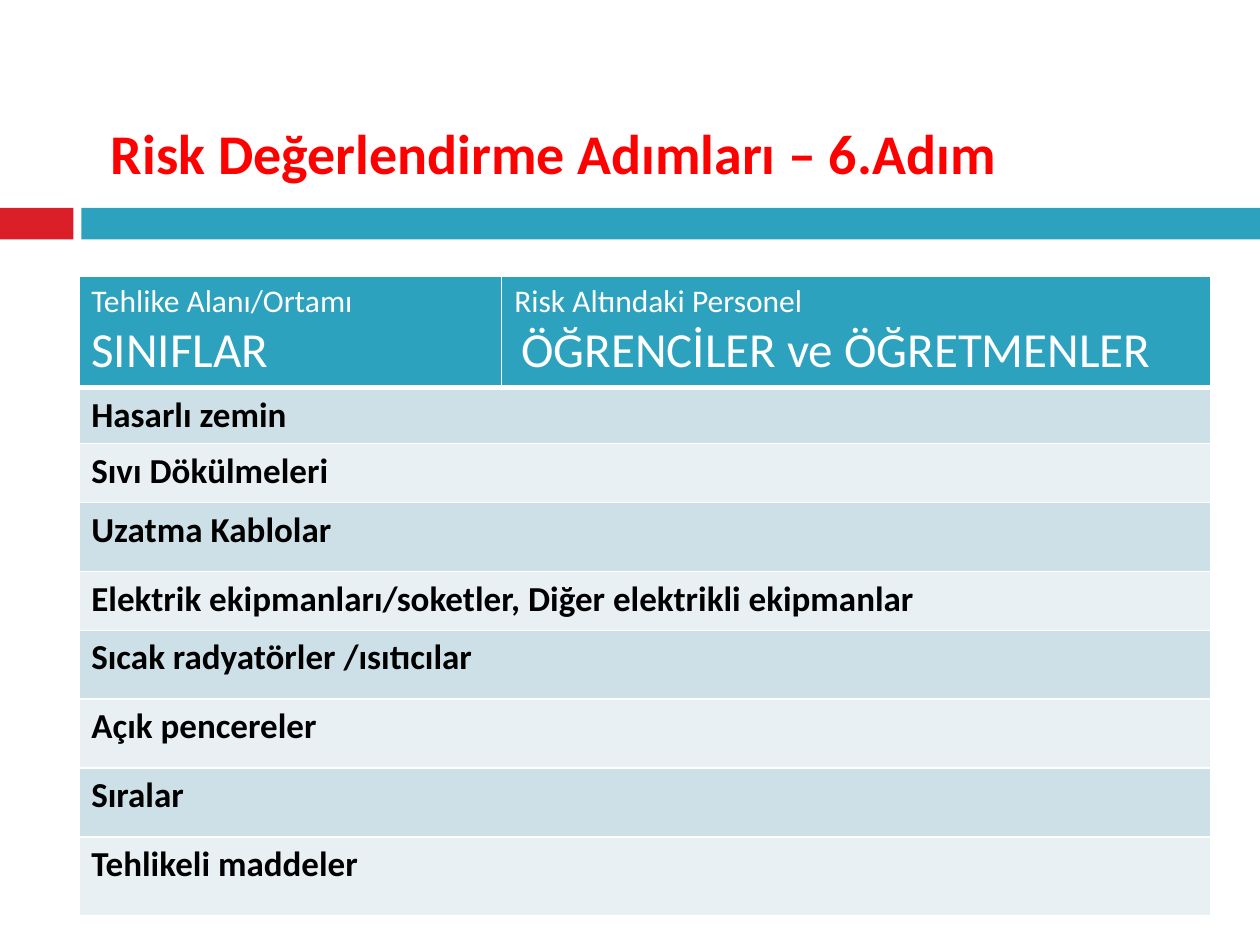
from lxml.etree import SubElement
from pptx import Presentation
from pptx.dml.color import RGBColor
from pptx.enum.shapes import MSO_SHAPE
from pptx.enum.text import MSO_ANCHOR, MSO_AUTO_SIZE, PP_ALIGN
from pptx.oxml.ns import qn
from pptx.util import Pt

TITLE = "Risk Değerlendirme Adımları – 6.Adım"
HEADERS = [
    ("Tehlike Alanı/Ortamı", "SINIFLAR"),
    ("Risk Altındaki Personel", " ÖĞRENCİLER ve ÖĞRETMENLER"),
]
HAZARDS = [  # text, row height
    ("Hasarlı zemin", 32),
    ("Sıvı Dökülmeleri", 33.7),
    ("Uzatma Kablolar", 39.4),
    ("Elektrik ekipmanları/soketler, Diğer elektrikli ekipmanlar", 33.7),
    ("Sıcak radyatörler /ısıtıcılar", 39.4),
    ("Açık pencereler", 39.4),
    ("Sıralar", 39.4),
    ("Tehlikeli maddeler", 45),
]
COLORS = {
    "red": "DA1F28", "teal": "2DA2BF", "title": "FF0000", "white": "FFFFFF",
    "black": "000000", "dark band": "CDE0E8", "light band": "E8F0F4",
}
FONT = "Calibri"
SLIDE_WIDTH, SLIDE_HEIGHT = 720, 540
BAR_TOP, BAR_HEIGHT = 118.8, 18
BARS = [("red", 0, 42), ("teal", 46.5, SLIDE_WIDTH - 46.5)]  # color, left, width
TABLE_LEFT, TABLE_TOP = 45, 157.7
COLUMN_WIDTHS = [241.7, 405]
HEADER_HEIGHT = 63.8


def color(name):
    return RGBColor.from_string(COLORS[name])


def format_text(paragraph, size, color_name, bold):
    font = paragraph.font
    font.name, font.size, font.bold = FONT, Pt(size), bold
    font.color.rgb = color(color_name)


def format_cell(cell, fill_name, bottom_width=1):
    """Give a cell white borders and a solid fill; borders must come first in the XML."""
    properties = cell._tc.get_or_add_tcPr()
    for side, width in (("lnL", 1), ("lnR", 1), ("lnT", 1), ("lnB", bottom_width)):
        line = SubElement(properties, qn(f"a:{side}"), w=str(Pt(width)))
        fill = SubElement(line, qn("a:solidFill"))
        SubElement(fill, qn("a:srgbClr"), val=COLORS["white"])
    cell.fill.solid()
    cell.fill.fore_color.rgb = color(fill_name)


def add_bars(slide):
    for name, left, width in BARS:
        bar = slide.shapes.add_shape(
            MSO_SHAPE.RECTANGLE, Pt(left), Pt(BAR_TOP), Pt(width), Pt(BAR_HEIGHT))
        bar.shadow.inherit = False
        bar.fill.solid()
        bar.fill.fore_color.rgb = color(name)
        bar.line.fill.background()


def add_title(slide):
    title = slide.shapes.title
    title.left, title.top, title.width, title.height = Pt(56.2), Pt(33.8), Pt(596), Pt(106.6)
    frame = title.text_frame
    frame.text = TITLE
    frame.auto_size = MSO_AUTO_SIZE.NONE
    frame.vertical_anchor = MSO_ANCHOR.MIDDLE
    frame.paragraphs[0].alignment = PP_ALIGN.LEFT
    format_text(frame.paragraphs[0], 32, "title", True)


def add_hazard_table(slide):
    heights = [HEADER_HEIGHT] + [height for _, height in HAZARDS]
    table = slide.shapes.add_table(
        len(heights), len(COLUMN_WIDTHS), Pt(TABLE_LEFT), Pt(TABLE_TOP),
        Pt(sum(COLUMN_WIDTHS)), Pt(sum(heights))).table
    table.horz_banding = False
    for column, width in zip(table.columns, COLUMN_WIDTHS):
        column.width = Pt(width)
    for row, height in zip(table.rows, heights):
        row.height = Pt(height)

    for index, (label, value) in enumerate(HEADERS):
        cell = table.cell(0, index)
        format_cell(cell, "teal", bottom_width=3)
        cell.text_frame.text = f"{label}\n{value}"
        for paragraph, size in zip(cell.text_frame.paragraphs, (18, 28)):
            format_text(paragraph, size, "white", False)
    # The leading space of the second heading keeps the label's size
    paragraph = table.cell(0, 1).text_frame.paragraphs[1]
    paragraph.runs[0].text = " "
    paragraph.runs[0].font.size = Pt(18)
    paragraph.add_run().text = HEADERS[1][1].strip()

    for index, (hazard, _) in enumerate(HAZARDS, start=1):
        band = "dark band" if index % 2 else "light band"
        for cell in table.rows[index].cells:
            format_cell(cell, band)
        first = table.cell(index, 0)
        first.merge(table.cell(index, 1))
        first.text_frame.text = hazard
        format_text(first.text_frame.paragraphs[0], 20, "black", True)


def main():
    presentation = Presentation()
    presentation.slide_width, presentation.slide_height = Pt(SLIDE_WIDTH), Pt(SLIDE_HEIGHT)
    slide = presentation.slides.add_slide(presentation.slide_layouts[5])
    add_bars(slide)
    add_hazard_table(slide)
    add_title(slide)
    presentation.save("out.pptx")


if __name__ == "__main__":
    main()
